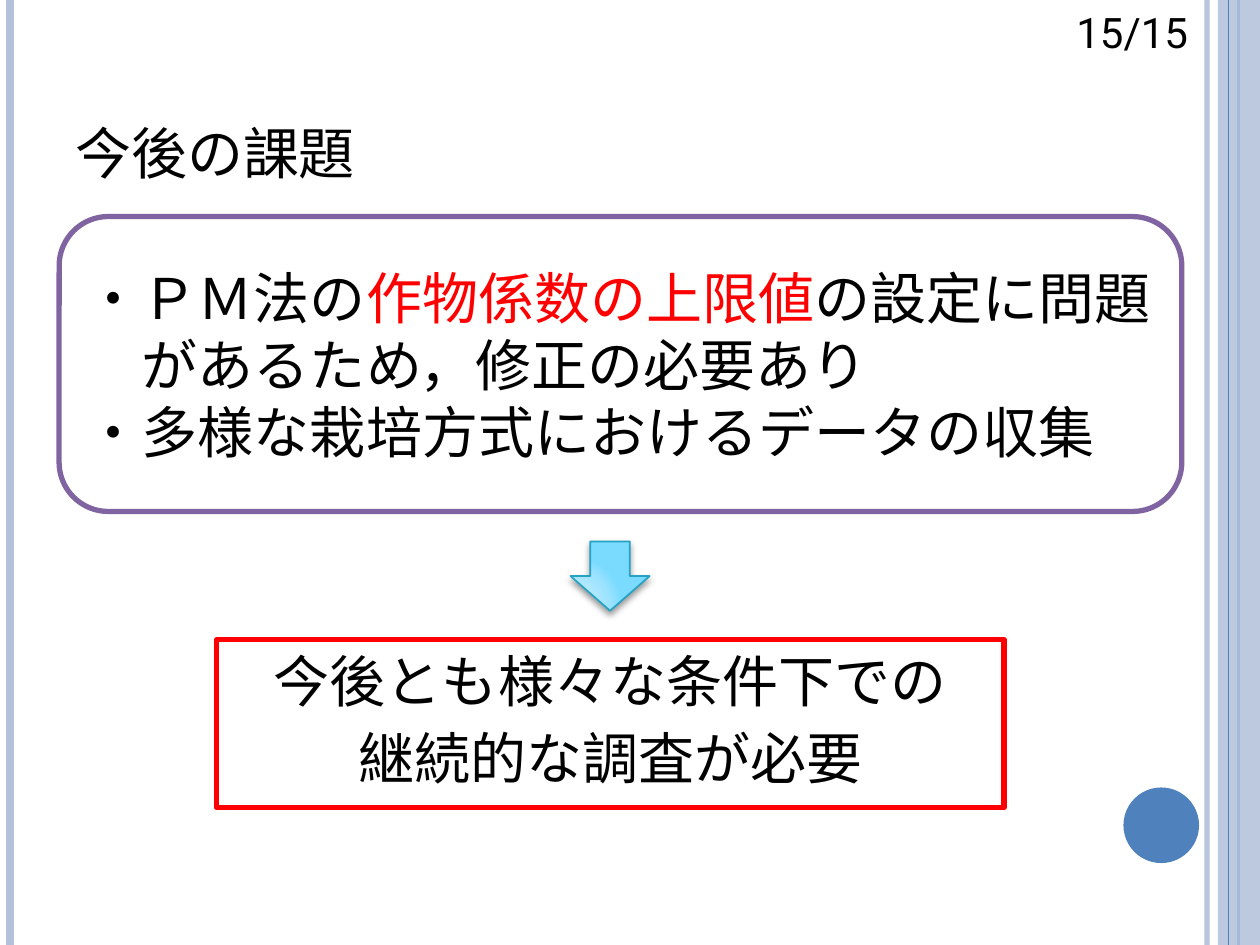
from lxml.etree import SubElement
from pptx import Presentation
from pptx.dml.color import RGBColor
from pptx.enum.shapes import MSO_CONNECTOR, MSO_SHAPE
from pptx.enum.text import MSO_ANCHOR, MSO_AUTO_SIZE, PP_ALIGN
from pptx.oxml import parse_xml
from pptx.oxml.ns import nsdecls, qn
from pptx.util import Pt

WIDTH, HEIGHT = 720, 540
FONT = "Roboto"
BLACK, WHITE, RED = "000000", "FFFFFF", "FF0000"
BLUE, PALE_BLUE, PURPLE, TEAL = "4F81BD", "B3C1DB", "8064A2", "26A2C4"

TITLE = "今後の課題"
PAGE_NUMBER = "15/15"
# Each paragraph is a list of (text, colour) spans.
ISSUES = [
    [("・ＰＭ法の", BLACK), ("作物係数の上限値", RED), ("の設定に問題", BLACK)],
    [("　があるため，修正の必要あり", BLACK)],
    [("・多様な栽培方式におけるデータの収集", BLACK)],
]
CONCLUSION = [
    [("今後とも様々な条件下での", BLACK)],
    [("継続的な調査が必要", BLACK)],
]
# Vertical rules: x, colour, width, opacity in percent
RULES_BELOW_BAND = [(689.8, PALE_BLUE, 3, 93), (5.8, PALE_BLUE, 4.5, 100), (707.8, BLUE, 1.5, 100)]
RULES_ABOVE_BAND = [(702, BLUE, 0.75, 100)]
ARROW_STOPS = [(0, "C4EEFF"), (30, "BFECFF"), (75, "9DE3FF"), (100, "7ADBFF")]


def paint(color_format, color):
    color_format.rgb = RGBColor.from_string(color)


def set_opacity(shape, percent):
    """Make the first colour in the shape's own properties translucent."""
    color = next(shape._element.spPr.iter(qn("a:srgbClr")))
    SubElement(color, qn("a:alpha")).set("val", str(percent * 1000))


def add_rule(page, x, color, width, opacity):
    rule = page.shapes.add_connector(MSO_CONNECTOR.STRAIGHT, Pt(x), 0, Pt(x), Pt(HEIGHT))
    paint(rule.line.color, color)
    rule.line.width = Pt(width)
    if opacity < 100:
        set_opacity(rule, opacity)
    SubElement(rule._element.spPr, qn("a:effectLst"))


def add_box(page, kind, left, top, width, height, fill=WHITE, line=None, line_width=3):
    box = page.shapes.add_shape(kind, Pt(left), Pt(top), Pt(width), Pt(height))
    box.shadow.inherit = False
    box.fill.solid()
    paint(box.fill.fore_color, fill)
    if line:
        paint(box.line.color, line)
        box.line.width = Pt(line_width)
    else:
        box.line.fill.background()
    return box


def write(shape, paragraphs, size=32, align=PP_ALIGN.LEFT, anchor=MSO_ANCHOR.TOP,
          space_before=0, small_caps=False, wrap=True):
    frame = shape.text_frame
    frame.word_wrap = wrap
    frame.auto_size = MSO_AUTO_SIZE.NONE
    frame.vertical_anchor = anchor
    for index, spans in enumerate(paragraphs):
        para = frame.add_paragraph() if index else frame.paragraphs[0]
        para.alignment = align
        para.space_before = Pt(space_before if index else 0)
        for text, color in spans:
            span = para.add_run()
            span.text = text
            span.font.name = FONT
            span.font.size = Pt(size)
            paint(span.font.color, color)
            if small_caps:
                span.font._element.set("cap", "small")


def add_arrow(page, left, top, width, height):
    """Add the down arrow with its radial gradient and soft shadow."""
    arrow = add_box(page, MSO_SHAPE.DOWN_ARROW, left, top, width, height, line=TEAL, line_width=1)
    stops = "".join(
        f'<a:gs pos="{position * 1000}"><a:srgbClr val="{color}"/></a:gs>'
        for position, color in ARROW_STOPS)
    gradient = parse_xml(
        f'<a:gradFill {nsdecls("a")} rotWithShape="1"><a:gsLst>{stops}</a:gsLst>'
        '<a:path path="circle"><a:fillToRect l="5000" t="100000" r="120000" b="10000"/>'
        '</a:path></a:gradFill>')
    properties = arrow._element.spPr
    properties.replace(properties.find(qn("a:solidFill")), gradient)
    shadow = parse_xml(
        f'<a:outerShdw {nsdecls("a")} blurRad="{Pt(4)}" dist="{Pt(2)}" dir="5400000" '
        'rotWithShape="0"><a:srgbClr val="000000"><a:alpha val="40000"/></a:srgbClr></a:outerShdw>')
    properties.find(qn("a:effectLst")).append(shadow)


def main():
    deck = Presentation()
    deck.slide_width, deck.slide_height = Pt(WIDTH), Pt(HEIGHT)
    page = deck.slides.add_slide(deck.slide_layouts[5])

    for rule in RULES_BELOW_BAND:
        add_rule(page, *rule)
    band = add_box(page, MSO_SHAPE.RECTANGLE, 696, 0, 24, HEIGHT, fill=PALE_BLUE)
    set_opacity(band, 87)
    for rule in RULES_ABOVE_BAND:
        add_rule(page, *rule)
    add_box(page, MSO_SHAPE.OVAL, 642, 450, 43.2, 43.2, fill=BLUE)

    title = page.shapes.title
    title.left, title.top, title.width, title.height = Pt(36), Pt(21.6), Pt(588), Pt(90)
    write(title, [[(TITLE, BLACK)]], size=40, anchor=MSO_ANCHOR.BOTTOM, small_caps=True)

    conclusion = add_box(page, MSO_SHAPE.RECTANGLE, 123.8, 365.6, 450, 96, line=RED)
    write(conclusion, CONCLUSION, align=PP_ALIGN.CENTER, space_before=6)

    number = page.shapes.add_textbox(Pt(596), 0, Pt(90), Pt(36))
    write(number, [[(PAGE_NUMBER, BLACK)]], size=24, align=PP_ALIGN.RIGHT)

    add_arrow(page, 326, 309.4, 45.2, 39.6)

    issues = add_box(page, MSO_SHAPE.ROUNDED_RECTANGLE, 33.8, 123.8, 641.5, 168.5, line=PURPLE)
    write(issues, ISSUES, anchor=MSO_ANCHOR.MIDDLE)

    deck.save("out.pptx")


if __name__ == "__main__":
    main()
